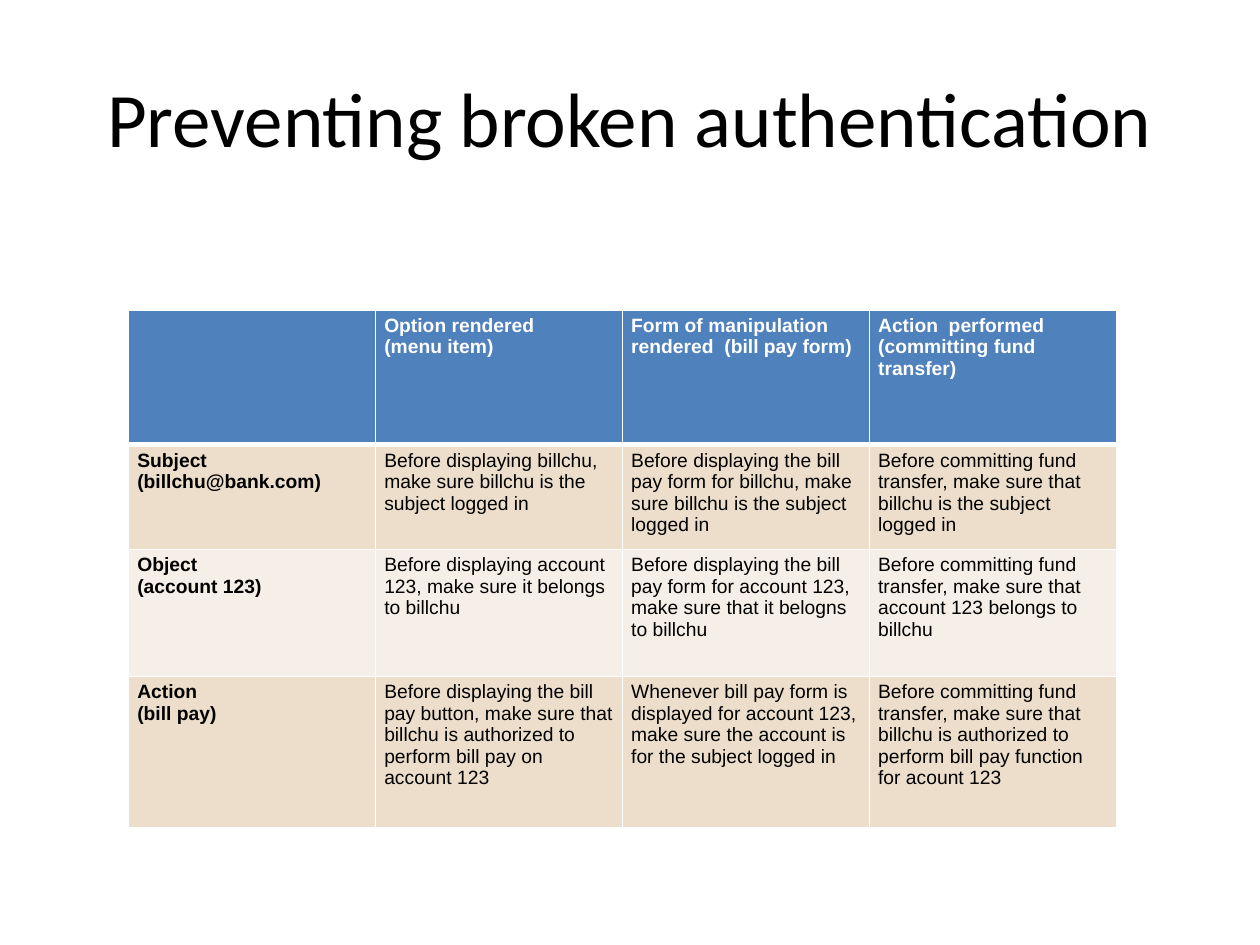
from lxml import etree
from pptx import Presentation
from pptx.dml.color import RGBColor
from pptx.enum import text
from pptx.oxml import ns
from pptx.util import Inches, Pt

COLORS = {
    "header": "4F81BD",
    "band_dark": "ECDECB",
    "band_light": "F6EFE7",
    "white": "FFFFFF",
    "black": "000000",
}
ROWS = [
    ["", "Option rendered\n(menu item)",
     "Form of manipulation rendered  (bill pay form)",
     "Action  performed (committing fund transfer)"],
    ["Subject (billchu@bank.com)",
     "Before displaying billchu, make sure billchu is the subject logged in",
     "Before displaying the bill pay form for billchu, make sure billchu is the subject logged in",
     "Before committing fund transfer, make sure that billchu is the subject logged in"],
    ["Object\n(account 123)",
     "Before displaying account 123, make sure it belongs to billchu",
     "Before displaying the bill pay form for account 123, make sure that it belogns to billchu",
     "Before committing fund transfer, make sure that account 123 belongs to billchu"],
    ["Action\n(bill pay)",
     "Before displaying the bill pay button, make sure that billchu is authorized to perform bill pay on account 123",
     "Whenever bill pay form is displayed for account 123, make sure the account is for the subject logged in",
     "Before committing fund transfer, make sure that billchu is authorized to perform bill pay function for acount 123"],
]
ROW_HEIGHTS = [1.07, 0.83, 1.01, 1.2]
ROW_FILLS = ["header", "band_dark", "band_light", "band_dark"]
MARGINS = {"margin_left": 0.07, "margin_right": 0.07,
           "margin_top": 0.04, "margin_bottom": 0.04}


def set_font(font, color, **values):
    for name, value in values.items():
        setattr(font, name, value)
    font.color.rgb = RGBColor.from_string(COLORS[color])


def add_border(cell, side, width):
    """Draw a white line on one side (L, R, T or B) of a table cell."""
    properties = cell._tc.get_or_add_tcPr()
    line = etree.SubElement(properties, ns.qn(f"a:ln{side}"), w=str(Pt(width)))
    fill = etree.SubElement(line, ns.qn("a:solidFill"))
    etree.SubElement(fill, ns.qn("a:srgbClr"), val=COLORS["white"])


presentation = Presentation()
presentation.slide_width = Inches(10)
presentation.slide_height = Inches(7.5)
slide = presentation.slides.add_slide(presentation.slide_layouts[5])

title = slide.shapes.title
title.left, title.top = Inches(0.5), Inches(0.3)
title.width, title.height = Inches(9), Inches(1.25)
title.text_frame.text = "Preventing broken authentication"
title.text_frame.vertical_anchor = text.MSO_ANCHOR.MIDDLE
title_paragraph = title.text_frame.paragraphs[0]
title_paragraph.alignment = text.PP_ALIGN.CENTER
set_font(title_paragraph.runs[0].font, "black", name="Calibri", size=Pt(44))

table = slide.shapes.add_table(
    len(ROWS), len(ROWS[0]), Inches(1.02), Inches(2.46),
    Inches(7.84), Inches(sum(ROW_HEIGHTS))).table
for column in table.columns:
    column.width = Inches(1.96)

for row_index, row in enumerate(ROWS):
    table.rows[row_index].height = Inches(ROW_HEIGHTS[row_index])
    is_header = row_index == 0
    borders = {"L": 1, "R": 1, "T": 3 if row_index == 1 else 1,
               "B": 3 if is_header else 1}
    for column_index, content in enumerate(row):
        cell = table.cell(row_index, column_index)
        for name, value in MARGINS.items():
            setattr(cell, name, Inches(value))
        for side, width in borders.items():
            add_border(cell, side, width)
        cell.fill.solid()
        cell.fill.fore_color.rgb = RGBColor.from_string(COLORS[ROW_FILLS[row_index]])
        cell.text_frame.text = content
        for paragraph in cell.text_frame.paragraphs:
            set_font(paragraph.font, "white" if is_header else "black",
                     name="Arial", size=Pt(11))
            for run in paragraph.runs:
                set_font(run.font, "white" if is_header else "black",
                         name="Arial", size=Pt(11),
                         bold=is_header or column_index == 0)

presentation.save("out.pptx")
